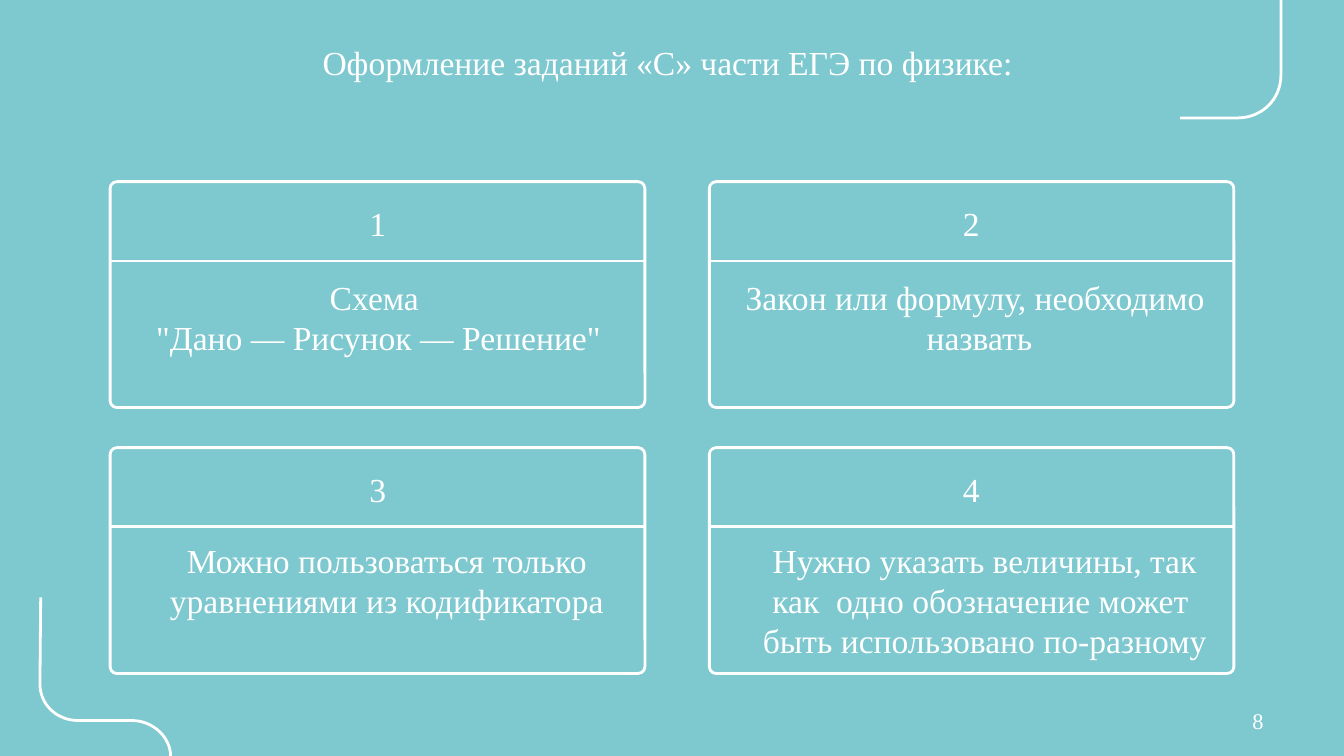
"""Build a slide with four numbered rules for writing up physics exam answers."""
import pptx
import pptx.util
import pptx.dml.color
import pptx.enum.shapes
import pptx.enum.text
import pptx.oxml

Pt = pptx.util.Pt
SHAPE = pptx.enum.shapes.MSO_SHAPE
ALIGN = pptx.enum.text.PP_ALIGN
ANCHOR = pptx.enum.text.MSO_ANCHOR

TITLE = "Оформление заданий «С» части ЕГЭ по физике: "
PAGE_NUMBER = "8"
FONT = "Times New Roman"
TEAL = "7EC8D0"
WHITE = "FFFFFF"
LINE_WIDTH = 1.5

CARDS = [
    {"lines": ["Схема ", '"Дано — Рисунок — Решение"'], "hanging": False, "body_width": 281.5},
    {"lines": ["Закон или формулу, необходимо ", "назвать"], "hanging": True, "body_width": 275.8},
    {"lines": ["Можно пользоваться только", "уравнениями из кодификатора"], "hanging": True, "body_width": 281.5},
    {"lines": ["Нужно указать величины, так", "как  одно обозначение может ", "быть использовано по-разному"],
     "hanging": True, "body_width": 281.5},
]
COLUMNS = [
    {"left": 59, "width": 286.5, "number_left": 62, "body_left": 62},
    {"left": 380, "width": 281, "number_left": 380, "body_left": 382.3},
]
ROWS = [{"top": 97.3, "body_top": 140.4}, {"top": 239.8, "body_top": 281.5}]
CARD_HEIGHT, HEADER_HEIGHT, CORNER = 121, 42.5, 3.6

CORNER_LINES = [
    [[(21.8, 320)], [(21.4, 365.8), (21, 377), (30.2, 386), (41.8, 386)],
     [(70.6, 386), (82, 386), (91.4, 395), (91.4, 405)]],
    [[(686.2, 0)], [(686.2, 40.3), (686.2, 53.3), (676, 63.2), (663, 63.2)], [(632.2, 63.2)]],
]


def color(value):
    return pptx.dml.color.RGBColor.from_string(value)


def style_line(shape):
    shape.line.color.rgb = color(WHITE)
    shape.line.width = Pt(LINE_WIDTH)


def curve_points(curve, steps=16):
    if len(curve) == 1:
        return curve
    weights = [((1 - t) ** 3, 3 * t * (1 - t) ** 2, 3 * t * t * (1 - t), t ** 3)
               for t in (step / steps for step in range(steps + 1))]
    return [tuple(sum(w * point[axis] for w, point in zip(row, curve)) for axis in (0, 1))
            for row in weights]


def add_corner_line(page, curves):
    points = [(Pt(x), Pt(y)) for curve in curves for x, y in curve_points(curve)]
    builder = page.shapes.build_freeform(*points[0])
    builder.add_line_segments(points[1:], close=False)
    shape = builder.convert_to_shape()
    shape.shadow.inherit = False
    shape.fill.background()
    style_line(shape)


def add_text(page, lines, left, top, width, height, size=18, align=ALIGN.CENTER,
             anchor=ANCHOR.MIDDLE, hanging=False, spacing=None):
    box = page.shapes.add_textbox(Pt(left), Pt(top), Pt(width), Pt(height))
    frame = box.text_frame
    frame.word_wrap = True
    frame.vertical_anchor = anchor
    frame.margin_left = frame.margin_right = Pt(7.2)
    frame.margin_top = frame.margin_bottom = Pt(7.2)
    frame.text = "\n".join(lines)
    for para in frame.paragraphs:
        para.alignment = align
        if spacing:
            para.line_spacing = Pt(spacing)
        if hanging:
            properties = para._p.get_or_add_pPr()
            properties.set("marL", str(Pt(36)))
            properties.set("indent", str(Pt(-27)))
        for span in para.runs:
            span.font.name = FONT
            span.font.size = Pt(size)
            span.font.color.rgb = color(WHITE)
    return box


def add_card(page, number, card, column, row):
    left, top, width = column["left"], row["top"], column["width"]
    frame = page.shapes.add_shape(SHAPE.ROUNDED_RECTANGLE, Pt(left), Pt(top), Pt(width), Pt(CARD_HEIGHT))
    frame.adjustments[0] = CORNER / CARD_HEIGHT
    frame.shadow.inherit = False
    frame.fill.background()
    style_line(frame)

    divider_top = Pt(top + HEADER_HEIGHT)
    divider = page.shapes.add_connector(pptx.enum.shapes.MSO_CONNECTOR.STRAIGHT,
                                        Pt(left), divider_top, Pt(left + width), divider_top)
    style_line(divider)
    divider._element.spPr.append(pptx.oxml.parse_xml(
        '<a:effectLst xmlns:a="http://schemas.openxmlformats.org/drawingml/2006/main"/>'))

    add_text(page, [str(number)], column["number_left"], top + 4.3, 280.8, 36)
    body = add_text(page, card["lines"], column["body_left"], row["body_top"], card["body_width"], 78.5,
                    anchor=ANCHOR.TOP, hanging=card["hanging"], spacing=21.4)
    body.text_frame.margin_top = Pt(8.2)


def main():
    deck = pptx.Presentation()
    deck.slide_width, deck.slide_height = Pt(720), Pt(405)
    page = deck.slides.add_slide(deck.slide_layouts[6])
    page.background.fill.solid()
    page.background.fill.fore_color.rgb = color(TEAL)

    for curves in CORNER_LINES:
        add_corner_line(page, curves)
    add_text(page, [TITLE], 0, 13.5, 720, 39.6)
    for index, card in enumerate(CARDS):
        add_card(page, index + 1, card, COLUMNS[index % 2], ROWS[index // 2])
    add_text(page, [PAGE_NUMBER], 516.2, 375.5, 167.8, 21.6, size=12, align=ALIGN.RIGHT)
    deck.save("out.pptx")


if __name__ == "__main__":
    main()
